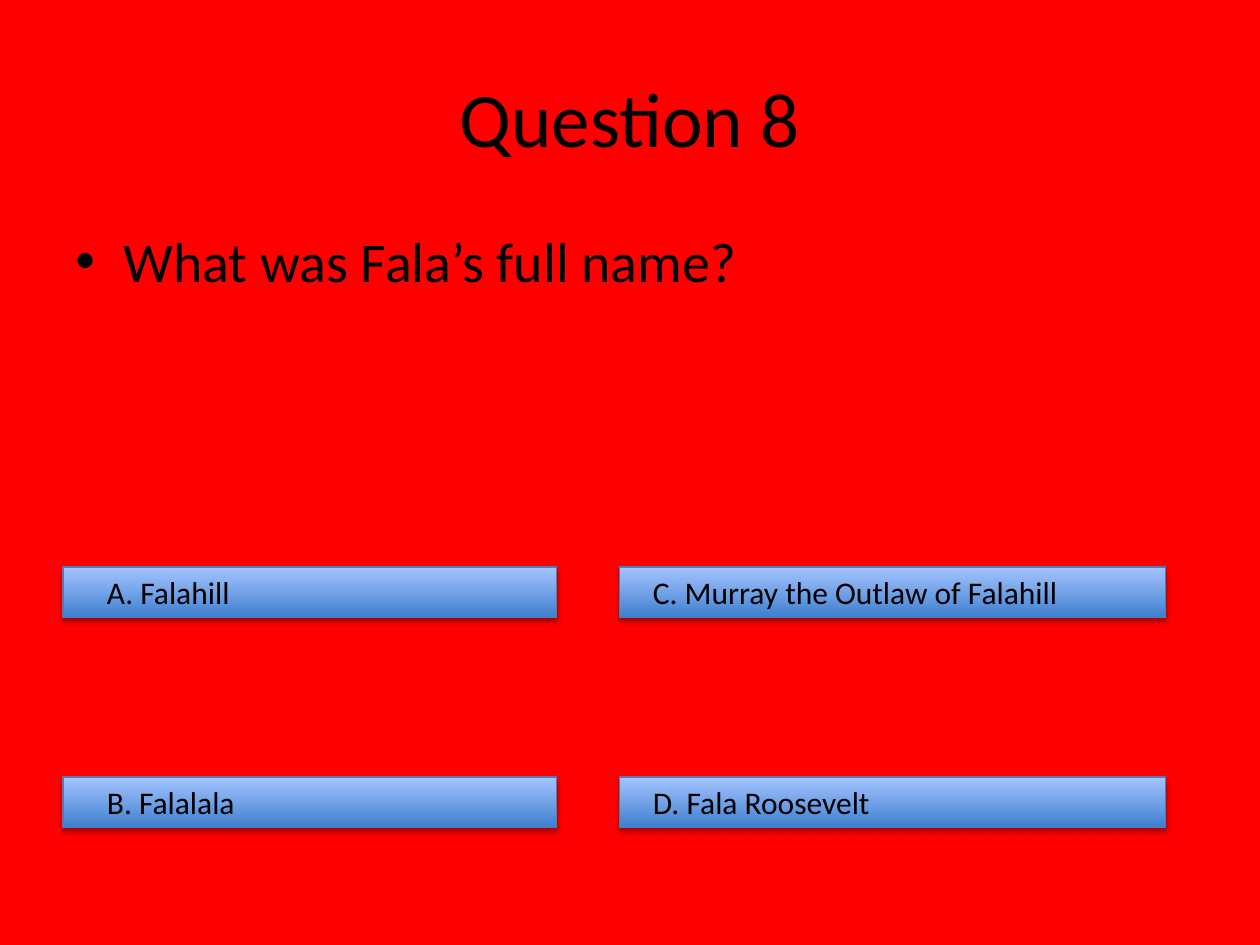
import lxml.etree
import pptx
import pptx.dml.color
import pptx.enum.shapes
import pptx.enum.text
import pptx.oxml.ns
import pptx.util

COLORS = {
    "background": "FF0000",
    "text": "000000",
    "bar_bottom": "3F80CE",
    "bar_top": "A4C4FF",
    "bar_line": "4B7EBC",
    "shadow": "000000",
}
FONT = "Calibri"
CELL = pptx.util.Inches(10) / 120
ANSWER_ROWS = (54, 74)
ANSWER_HEIGHT = 4.8
COLUMNS = (
    {"bar": (6, 47), "text": (9, 44), "answers": ("A. Falahill", "B. Falalala")},
    {
        "bar": (59, 52),
        "text": (61, 43),
        "answers": ("C. Murray the Outlaw of Falahill", "D. Fala Roosevelt"),
    },
)


def color(name):
    """Return the named colour."""
    return pptx.dml.color.RGBColor.from_string(COLORS[name])


def cells(*counts):
    """Turn counts of grid cells into lengths."""
    return [pptx.util.Emu(round(count * CELL)) for count in counts]


def add_child(parent, tag, **attributes):
    """Append a DrawingML element to its parent."""
    return lxml.etree.SubElement(parent, pptx.oxml.ns.qn(tag), attributes)


def add_text(page, text, area, size=18, align="LEFT", anchor="TOP", bullet=False):
    """Add a text box over an area given in grid cells."""
    box = page.shapes.add_textbox(*cells(*area))
    frame = box.text_frame
    frame.word_wrap = True
    frame.vertical_anchor = pptx.enum.text.MSO_ANCHOR[anchor]
    para = frame.paragraphs[0]
    para.alignment = pptx.enum.text.PP_ALIGN[align]
    span = para.add_run()
    span.text = text
    span.font.name = FONT
    span.font.size = pptx.util.Pt(size)
    span.font.color.rgb = color("text")
    if bullet:
        indent = pptx.util.Inches(0.38)
        properties = para._p.get_or_add_pPr()
        properties.set("marL", str(indent))
        properties.set("indent", str(-indent))
        add_child(properties, "a:buFont", typeface="Arial")
        add_child(properties, "a:buChar", char="•")


def add_shadow(shape):
    """Give a shape a soft shadow below it."""
    shape.shadow.inherit = False
    effects = shape._element.spPr.find(pptx.oxml.ns.qn("a:effectLst"))
    shadow = add_child(
        effects,
        "a:outerShdw",
        blurRad=str(pptx.util.Pt(3.1)),
        dist=str(pptx.util.Pt(1.8)),
        dir="5400000",
        rotWithShape="0",
    )
    tint = add_child(shadow, "a:srgbClr", val=COLORS["shadow"])
    add_child(tint, "a:alpha", val="35000")


def add_bar(page, area):
    """Add an answer button over an area given in grid cells."""
    kind = pptx.enum.shapes.MSO_SHAPE.ACTION_BUTTON_CUSTOM
    bar = page.shapes.add_shape(kind, *cells(*area))
    bar.fill.gradient()
    bar.fill.gradient_angle = 90
    for stop, name in zip(bar.fill.gradient_stops, ("bar_bottom", "bar_top")):
        stop.color.rgb = color(name)
    bar.line.color.rgb = color("bar_line")
    bar.line.width = pptx.util.Pt(0.75)
    add_shadow(bar)


def add_answers(page, column):
    """Add the buttons and answers of one column."""
    for row, answer in zip(ANSWER_ROWS, column["answers"]):
        for part in ("bar", "text"):
            left, width = column[part]
            area = (left, row, width, ANSWER_HEIGHT)
            if part == "bar":
                add_bar(page, area)
            else:
                add_text(page, answer, area)


def main():
    """Build the quiz slide and save it."""
    deck = pptx.Presentation()
    deck.slide_width, deck.slide_height = cells(120, 90)
    page = deck.slides.add_slide(deck.slide_layouts[6])
    page.background.fill.solid()
    page.background.fill.fore_color.rgb = color("background")
    add_text(page, "Question 8", (6, 3.6, 108, 15), size=44, align="CENTER", anchor="MIDDLE")
    add_text(page, "What was Fala’s full name?", (6, 21, 108, 21), size=32, bullet=True)
    for column in COLUMNS:
        add_answers(page, column)
    deck.save("out.pptx")


if __name__ == "__main__":
    main()
